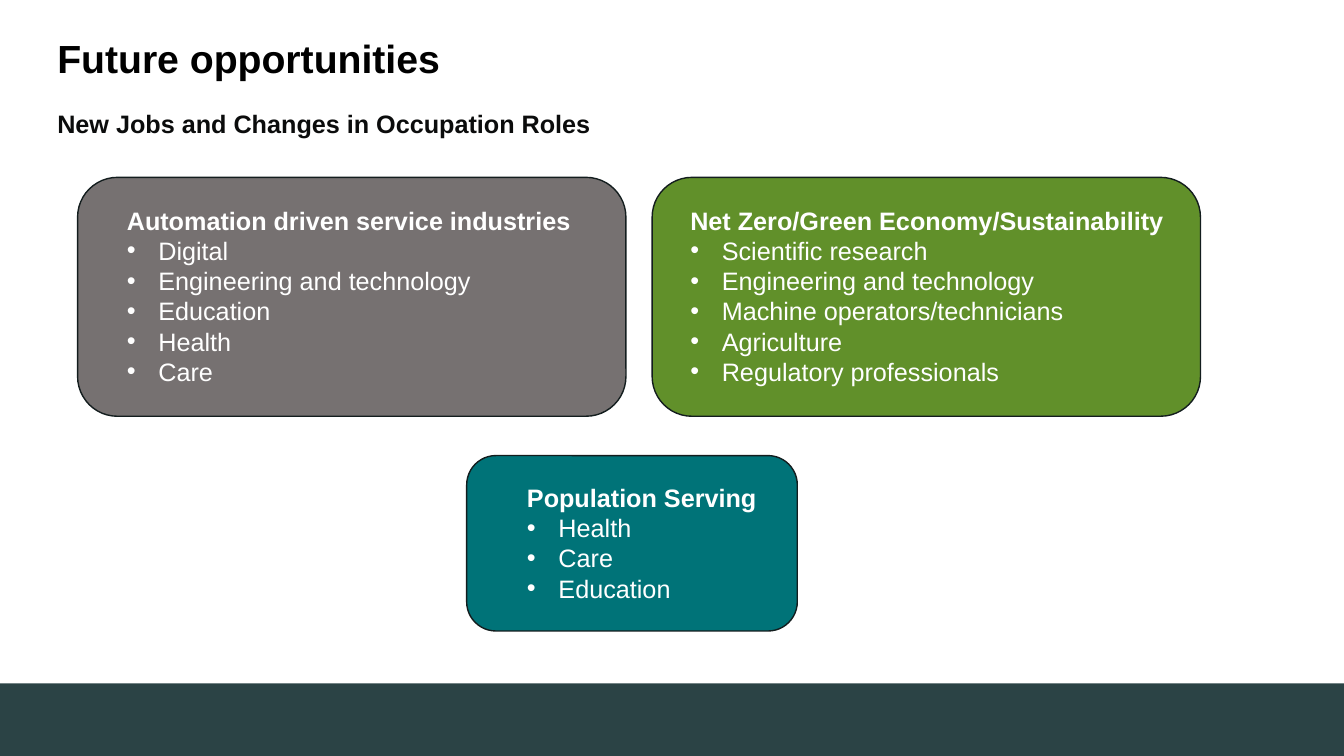
from lxml.etree import SubElement
from pptx import Presentation
from pptx.dml.color import RGBColor
from pptx.enum.shapes import MSO_SHAPE
from pptx.enum.text import MSO_AUTO_SIZE
from pptx.oxml.ns import qn
from pptx.util import Pt

COLORS = {
    "footer": "2B4345", "outline": "131D1E", "gray": "767171",
    "green": "61902A", "teal": "007378", "white": "FFFFFF",
    "title": "000000", "subtitle": "0B0C0C",
}

LEFT_MARGIN = 33.84
CARD_TOP, CARD_WIDTH, CARD_HEIGHT = 126.72, 391.68, 170.64
LINE_HEIGHT, BOX_PADDING = 22, 6.4
BULLET_INDENT = 22.5

# color, card (left, top, width, height), text left and width, heading, items
CARDS = [
    ("teal", (333.36, 325.44, 236.16, 125.28), 369.36, 180,
     "Population Serving", ["Health", "Care", "Education"]),
    ("green", (465.84, CARD_TOP, CARD_WIDTH, CARD_HEIGHT), 486, 378,
     "Net Zero/Green Economy/Sustainability",
     ["Scientific research", "Engineering and technology",
      "Machine operators/technicians", "Agriculture",
      "Regulatory professionals"]),
    ("gray", (55.44, CARD_TOP, CARD_WIDTH, CARD_HEIGHT), 83.52, 334.8,
     "Automation driven service industries",
     ["Digital", "Engineering and technology", "Education", "Health", "Care"]),
]


class SlideBuilder:
    def __init__(self, slide, font_name="Arial"):
        self.slide = slide
        self.font_name = font_name

    def color(self, name):
        return RGBColor.from_string(COLORS[name])

    def panel(self, kind, box, fill, outline=None):
        shape = self.slide.shapes.add_shape(kind, *map(Pt, box))
        shape.shadow.inherit = False
        shape.fill.solid()
        shape.fill.fore_color.rgb = self.color(fill)
        if outline:
            shape.line.color.rgb = self.color(outline)
            shape.line.width = Pt(1)
        else:
            shape.line.fill.background()

    def text(self, box, heading, items=(), size=18, color="white"):
        """Add a bold heading, followed by any items as bullets."""
        shape = self.slide.shapes.add_textbox(*map(Pt, box))
        frame = shape.text_frame
        frame.word_wrap = True
        frame.auto_size = MSO_AUTO_SIZE.SHAPE_TO_FIT_TEXT
        self.add_styled_run(frame.paragraphs[0], heading, size, color, bold=True)
        for item in items:
            paragraph = frame.add_paragraph()
            self.bullet(paragraph)
            self.add_styled_run(paragraph, item, size, color, bold=False)

    def add_styled_run(self, paragraph, text, size, color, bold):
        run = paragraph.add_run()
        run.text = text
        style = {"name": self.font_name, "size": Pt(size), "bold": bold}
        for attribute, value in style.items():
            setattr(run.font, attribute, value)
        run.font.color.rgb = self.color(color)

    def bullet(self, paragraph):
        properties = paragraph._p.get_or_add_pPr()
        properties.set("marL", str(Pt(BULLET_INDENT)))
        properties.set("indent", str(-Pt(BULLET_INDENT)))
        SubElement(properties, qn("a:buFont"), typeface=self.font_name)
        SubElement(properties, qn("a:buChar"), char="•")

    def card(self, color, box, text_left, text_width, heading, items):
        """Add a rounded panel with its text centred on the panel's height."""
        self.panel(MSO_SHAPE.ROUNDED_RECTANGLE, box, color, "outline")
        _, top, _, height = box
        text_height = LINE_HEIGHT * (len(items) + 1) + BOX_PADDING
        text_top = top + (height - text_height) / 2
        self.text((text_left, text_top, text_width, text_height), heading, items)


def main():
    presentation = Presentation()
    presentation.slide_width = Pt(960)
    presentation.slide_height = Pt(540)
    builder = SlideBuilder(presentation.slides.add_slide(presentation.slide_layouts[6]))

    builder.panel(MSO_SHAPE.RECTANGLE, (0, 488.16, 960, 51.84), "footer")
    builder.text((LEFT_MARGIN, 20.88, 480, 41.04), "Future opportunities",
                 size=28, color="title")
    builder.text((LEFT_MARGIN, 74.16, 404.64, 28.8),
                 "New Jobs and Changes in Occupation Roles", color="subtitle")
    for card in CARDS:
        builder.card(*card)
    presentation.save("out.pptx")


if __name__ == "__main__":
    main()
